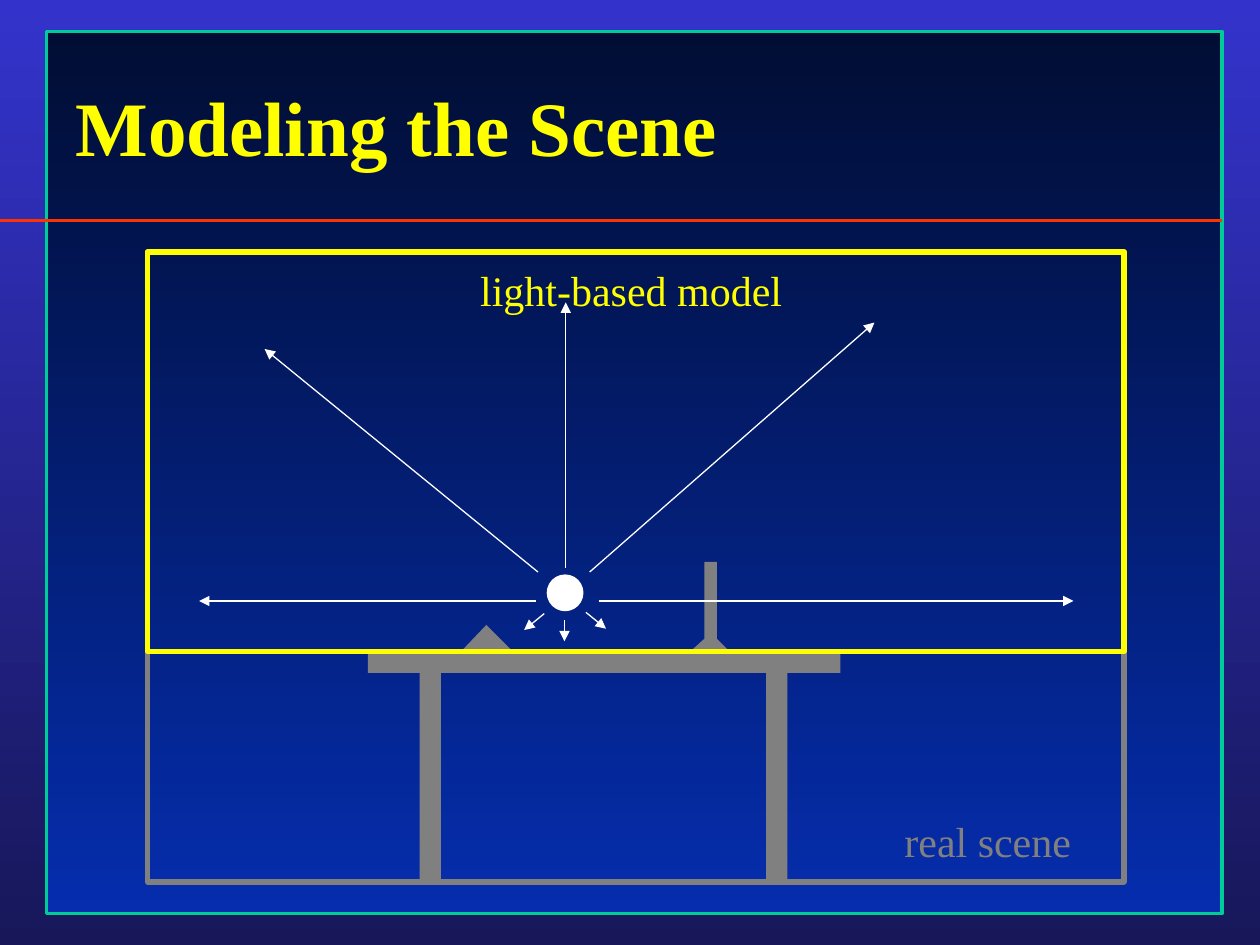
from dataclasses import dataclass

from lxml.etree import SubElement
from pptx import Presentation
from pptx.dml.color import RGBColor
from pptx.enum.shapes import MSO_CONNECTOR, MSO_SHAPE
from pptx.enum.text import MSO_ANCHOR, MSO_AUTO_SIZE, PP_ALIGN
from pptx.oxml import parse_xml
from pptx.oxml.ns import nsdecls, qn
from pptx.util import Inches, Pt


@dataclass(frozen=True)
class Theme:
    """Colours, font and type sizes of the slide."""

    background: tuple = ("3333CC", "17175A")
    panel: tuple = ("010D33", "052DAD")
    border: str = "00CC99"
    rule: str = "FF3300"
    model: str = "FFFF00"
    scene: str = "808080"
    light: str = "FFFFFF"
    font: str = "Times New Roman"
    title_size: int = 44
    label_size: int = 24


THEME = Theme()


def fill_gradient(fill, colors):
    """Fill from the first colour at the top to the second at the bottom."""
    fill.gradient()
    fill.gradient_angle = 270
    for stop, position, color in zip(fill.gradient_stops, (0, 1), colors):
        stop.position = position
        stop.color.rgb = RGBColor.from_string(color)


def style_shape(shape, fill=None, line=None, width=3):
    """Set plain fill and outline, leaving out what is not given."""
    shape.shadow.inherit = False
    if fill:
        shape.fill.solid()
        shape.fill.fore_color.rgb = RGBColor.from_string(fill)
    else:
        shape.fill.background()
    if line:
        shape.line.color.rgb = RGBColor.from_string(line)
        shape.line.width = Pt(width)
    else:
        shape.line.fill.background()


def add_box(shapes, box, kind=MSO_SHAPE.RECTANGLE, **style):
    """Add a preset shape at left, top, width, height."""
    shape = shapes.add_shape(kind, *map(Inches, box))
    style_shape(shape, **style)
    return shape


def add_outline(shapes, points, color):
    """Add a filled closed polygon."""
    corners = [(Inches(x), Inches(y)) for x, y in points]
    builder = shapes.build_freeform(*corners[0])
    builder.add_line_segments(corners[1:], close=True)
    style_shape(builder.convert_to_shape(), fill=color)


def add_line(shapes, start, end, color, width, arrow=False):
    """Add a straight line, with an arrowhead at its end if wanted."""
    line = shapes.add_connector(MSO_CONNECTOR.STRAIGHT, *map(Inches, start + end))
    line.line.color.rgb = RGBColor.from_string(color)
    line.line.width = Pt(width)
    if arrow:
        SubElement(line.line._get_or_add_ln(), qn("a:tailEnd"), type="triangle")
    SubElement(line.element.spPr, qn("a:effectLst"))


def add_run(paragraph, text, size, color, bold=False):
    """Add a run of shadowed text."""
    run = paragraph.add_run()
    run.text = text
    run.font.size = Pt(size)
    run.font.bold = bold
    run.font.name = THEME.font
    run.font.color.rgb = RGBColor.from_string(color)
    shadow = parse_xml(
        f'<a:effectLst {nsdecls("a")}><a:outerShdw dist="35921" dir="2700000" algn="ctr">'
        '<a:srgbClr val="000000"/></a:outerShdw></a:effectLst>'
    )
    run.font.fill._xPr.find(qn("a:solidFill")).addnext(shadow)


def add_label(shapes, box, text, color):
    """Add a centred one-line label."""
    frame = shapes.add_textbox(*map(Inches, box)).text_frame
    frame.word_wrap = False
    frame.auto_size = MSO_AUTO_SIZE.SHAPE_TO_FIT_TEXT
    paragraph = frame.paragraphs[0]
    paragraph.alignment = PP_ALIGN.CENTER
    add_run(paragraph, text, THEME.label_size, color)


def add_frame(slide):
    """Add the background, the bordered panel and the title rule."""
    fill_gradient(slide.background.fill, THEME.background)
    panel = add_box(slide.shapes, (0.37, 0.25, 9.33, 7), line=THEME.border, width=2)
    fill_gradient(panel.fill, THEME.panel)
    add_line(slide.shapes, (0, 1.75), (9.7, 1.75), THEME.rule, 2)


def add_title(slide, text):
    """Place the title placeholder in front of the panel."""
    title = slide.shapes.title
    title.left, title.top, title.width, title.height = map(Inches, (0.5, 0.33, 8, 1.33))
    title.element.getparent().append(title.element)
    frame = title.text_frame
    frame.word_wrap = True
    frame.auto_size = MSO_AUTO_SIZE.NONE
    frame.vertical_anchor = MSO_ANCHOR.MIDDLE
    paragraph = frame.paragraphs[0]
    paragraph.alignment = PP_ALIGN.LEFT
    add_run(paragraph, text, THEME.title_size, THEME.model, bold=True)


def add_real_scene(slide):
    """Draw the room, the table and the objects on it."""
    shapes = slide.shapes.add_group_shape().shapes
    cone = [(3.66, 5.17), (3.86, 4.96), (4.07, 5.17)]
    stand = [(5.59, 5.07), (5.48, 5.17), (5.79, 5.17), (5.69, 5.07), (5.69, 4.46), (5.59, 4.46)]
    for points in (cone, stand):
        add_outline(shapes, points, THEME.scene)
    add_box(shapes, (1.17, 2, 7.75, 5), line=THEME.scene)
    add_box(shapes, (2.92, 5.17, 3.75, 0.17), fill=THEME.scene)
    for leg_left in (3.33, 6.08):
        add_box(shapes, (leg_left, 5.33, 0.17, 1.67), fill=THEME.scene)
    add_label(shapes, (7.08, 6.42, 1.52, 0.5), "real scene", THEME.scene)


def add_light_model(slide):
    """Draw the outline of the modelled region."""
    shapes = slide.shapes.add_group_shape().shapes
    add_box(shapes, (1.17, 2, 7.75, 3.17), line=THEME.model)
    add_label(shapes, (3.71, 2.05, 2.6, 0.5), "light-based model", THEME.model)


def add_light(slide):
    """Draw the light source and its rays."""
    shapes = slide.shapes.add_group_shape().shapes
    rays = [
        ((4.75, 4.77), (8.52, 4.77)),
        ((4.49, 4.51), (4.49, 2.4)),
        ((4.68, 4.54), (6.94, 2.56)),
        ((4.25, 4.77), (1.58, 4.77)),
        ((4.27, 4.54), (2.1, 2.77)),
        ((4.65, 4.86), (4.81, 4.99)),
        ((4.32, 4.87), (4.16, 5)),
        ((4.48, 4.92), (4.48, 5.09)),
    ]
    for start, end in rays:
        add_line(shapes, start, end, THEME.light, 0.75, arrow=True)
    add_box(shapes, (4.36, 4.58, 0.25, 0.25), MSO_SHAPE.OVAL, fill=THEME.light, line=THEME.light)


def main():
    """Build and save the slide."""
    presentation = Presentation()
    presentation.slide_width, presentation.slide_height = Inches(10), Inches(7.5)
    slide = presentation.slides.add_slide(presentation.slide_layouts[5])
    add_frame(slide)
    add_real_scene(slide)
    add_title(slide, "Modeling the Scene")
    add_light_model(slide)
    add_light(slide)
    presentation.save("out.pptx")


if __name__ == "__main__":
    main()
